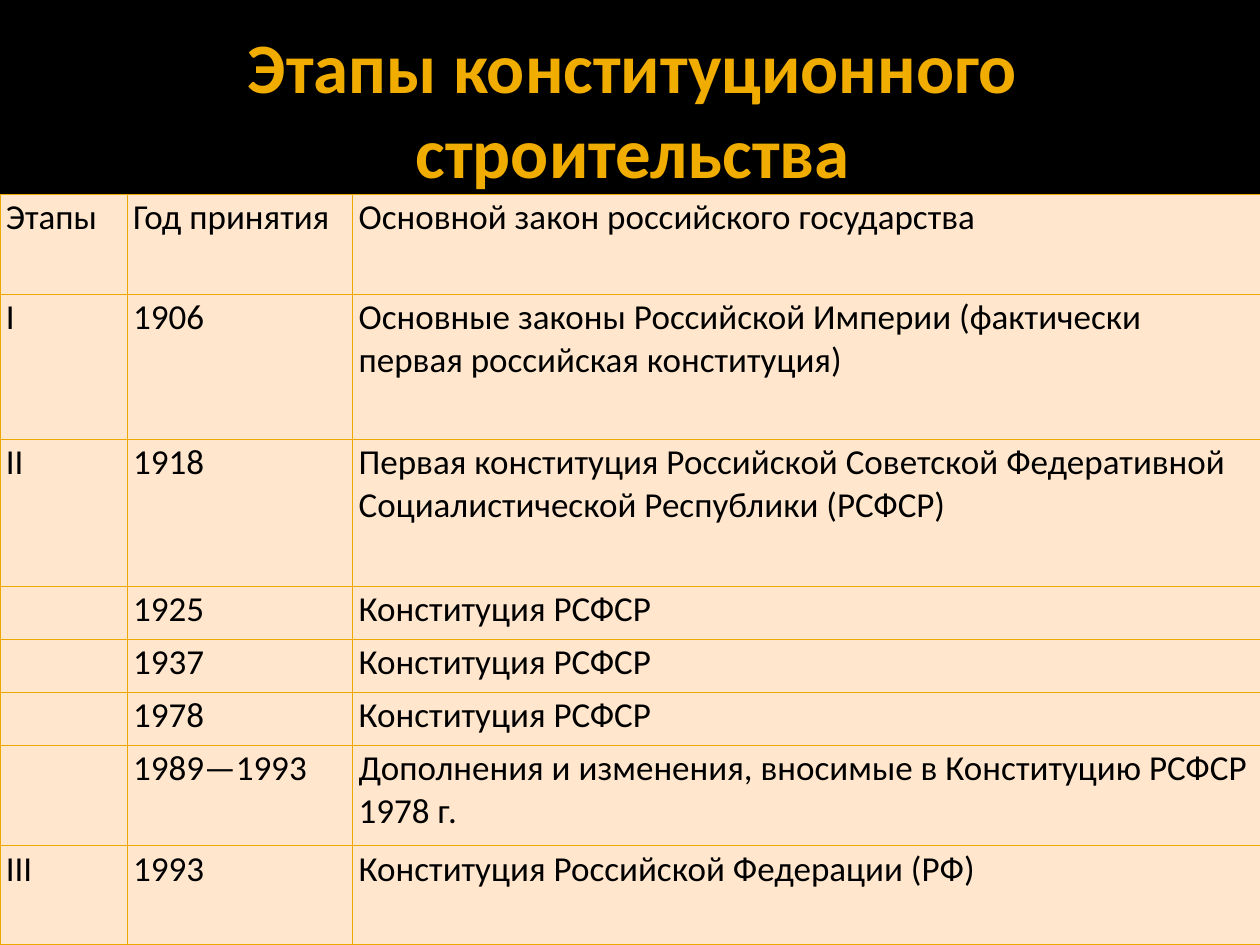
from dataclasses import dataclass

from lxml.etree import SubElement
from pptx import Presentation
from pptx.dml.color import RGBColor as RGB
from pptx.enum.shapes import MSO_SHAPE as Shape
from pptx.enum.text import MSO_ANCHOR as Anchor, PP_ALIGN as Align
from pptx.oxml.ns import qn
from pptx.util import Pt


@dataclass(frozen=True)
class Theme:
    font: str = "Calibri"
    title_size: float = 40.5
    cell_size: float = 20
    header: str = "000000"
    title: str = "F0AD00"
    text: str = "000000"
    cell: str = "FFE6CC"
    border: str = "EBA900"
    border_width: float = 0.5


class SlideBuilder:
    def __init__(self, slide, theme):
        self.slide = slide
        self.theme = theme

    def style(self, paragraph, size, color, bold=False):
        for run in paragraph.runs:
            run.font.name = self.theme.font
            run.font.size = Pt(size)
            run.font.bold = bold
            run.font.color.rgb = RGB.from_string(color)

    def margins(self, target, left, top, right, bottom):
        target.margin_left, target.margin_right = Pt(left), Pt(right)
        target.margin_top, target.margin_bottom = Pt(top), Pt(bottom)

    def band(self, left, top, width, height, color):
        band = self.slide.shapes.add_shape(
            Shape.RECTANGLE, Pt(left), Pt(top), Pt(width), Pt(height))
        band.shadow.inherit = False
        band.fill.solid()
        band.fill.fore_color.rgb = RGB.from_string(color)
        band.line.fill.background()

    def title(self, text, left, top, width, height):
        frame = self.slide.shapes.add_textbox(
            Pt(left), Pt(top), Pt(width), Pt(height)).text_frame
        frame.word_wrap = True
        frame.vertical_anchor = Anchor.MIDDLE
        self.margins(frame, 7.2, 3.6, 3.6, 3.6)
        frame.text = text
        frame.paragraphs[0].alignment = Align.CENTER
        self.style(frame.paragraphs[0], self.theme.title_size, self.theme.title, True)

    def borders(self, cell):
        properties = cell._tc.get_or_add_tcPr()
        for side in ("a:lnL", "a:lnR", "a:lnT", "a:lnB"):
            line = SubElement(properties, qn(side), w=str(Pt(self.theme.border_width)))
            fill = SubElement(line, qn("a:solidFill"))
            SubElement(fill, qn("a:srgbClr"), val=self.theme.border)

    def table(self, rows, left, top, widths, heights):
        table = self.slide.shapes.add_table(
            len(rows), len(widths), Pt(left), Pt(top),
            Pt(sum(widths)), Pt(sum(heights))).table
        table.first_row = table.horz_banding = False
        for column, width in zip(table.columns, widths):
            column.width = Pt(width)
        for row, height, texts in zip(table.rows, heights, rows):
            row.height = Pt(height)
            for cell, text in zip(row.cells, texts):
                self.margins(cell, 3.4, 1.3, 3.4, 1.3)
                self.borders(cell)
                cell.fill.solid()
                cell.fill.fore_color.rgb = RGB.from_string(self.theme.cell)
                cell.text_frame.text = text
                self.style(cell.text_frame.paragraphs[0],
                           self.theme.cell_size, self.theme.text)


STAGES = [
    ("Этапы", "Год принятия", "Основной закон российского государства"),
    ("I", "1906", "Основные законы Российской Империи "
                  "(фактически первая российская конституция)"),
    ("II", "1918", "Первая конституция Российской Советской Федеративной "
                   "Социалистической Республики (РСФСР)"),
    *[("", year, "Конституция РСФСР") for year in ("1925", "1937", "1978")],
    ("", "1989—1993", "Дополнения и изменения, вносимые в Конституцию РСФСР 1978 г."),
    ("III", "1993", "Конституция Российской Федерации (РФ)"),
]


def main():
    deck = Presentation()
    deck.slide_width, deck.slide_height = Pt(720), Pt(540)
    theme = Theme()
    builder = SlideBuilder(deck.slides.add_slide(deck.slide_layouts[6]), theme)

    # Header band and title
    builder.band(0, 0, 720, 113, theme.header)
    builder.title("Этапы конституционного строительства", 36, 12.2, 648, 98.6)

    # Table of constitutional stages
    builder.table(STAGES, 0, 111, widths=(72.7, 128.9, 518.4),
                  heights=(57, 83, 84, *[30.3] * 3, 57.5, 56.6))

    deck.save("out.pptx")


if __name__ == "__main__":
    main()
